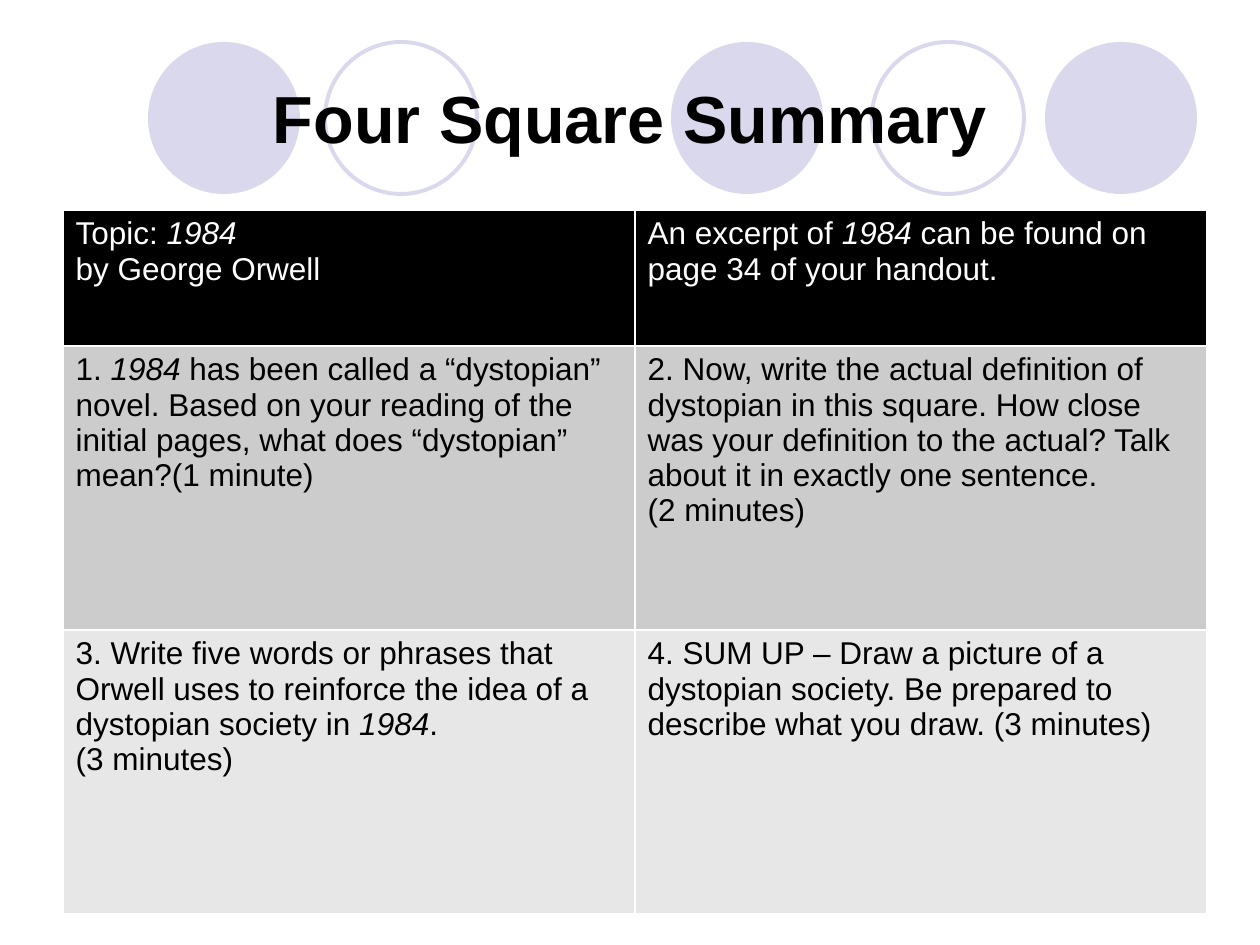
from lxml.etree import SubElement
from pptx import Presentation
from pptx.dml.color import RGBColor
from pptx.enum.shapes import MSO_SHAPE
from pptx.enum.text import MSO_ANCHOR, PP_ALIGN
from pptx.oxml.ns import qn
from pptx.util import Pt

SCALE = 914400 / 126


def px(length):
    return round(length * SCALE)


def color(value):
    return RGBColor.from_string(value)


deck = Presentation()
deck.slide_width, deck.slide_height = px(1260), px(945)
page = deck.slides.add_slide(deck.slide_layouts[6])

# Row of circles, filled or outlined
for left, filled in [(671, True), (1045, True), (148, True), (872, False), (325, False)]:
    circle = page.shapes.add_shape(MSO_SHAPE.OVAL, px(left), px(42), px(152), px(152))
    circle.shadow.inherit = False
    if filled:
        circle.fill.solid()
        circle.fill.fore_color.rgb = color("D9D8EC")
        circle.line.fill.background()
    else:
        circle.fill.background()
        circle.line.color.rgb = color("D9D8EC")
        circle.line.width = Pt(2.25)

# Title
title = page.shapes.add_textbox(px(63), px(38), px(1134), px(158)).text_frame
title.word_wrap = True
title.vertical_anchor = MSO_ANCHOR.MIDDLE
para = title.paragraphs[0]
para.text = "Four Square Summary"
para.alignment = PP_ALIGN.CENTER
para.font.name = "Arial"
para.font.size = Pt(38)
para.font.bold = True
para.font.color.rgb = color("000000")

# Table: height, fill, text colour and cells of each row; asterisks enclose italics
rows = [
    (136, "000000", "FFFFFF", [
        ["Topic: *1984*", "by George Orwell"],
        ["An excerpt of *1984 *can be found on page 34 of your handout."],
    ]),
    (284, "CCCCCC", "000000", [
        ["1. *1984* has been called a “dystopian” novel. Based on your reading of the "
         "initial pages, what does “dystopian” mean?(1 minute)"],
        ["2. Now, write the actual definition of dystopian in this square. How close was "
         "your definition to the actual? Talk about it in exactly one sentence.",
         "(2 minutes)"],
    ]),
    (284, "E7E7E7", "000000", [
        ["3. Write five words or phrases that Orwell uses to reinforce the idea of a "
         "dystopian society in *1984*.", "(3 minutes)"],
        ["4. SUM UP – Draw a picture of a dystopian society. Be prepared to describe "
         "what you draw. (3 minutes)"],
    ]),
]
table = page.shapes.add_table(3, 2, px(63), px(210), px(1144), px(704)).table
for column in table.columns:
    column.width = px(572)

for row_index, (height, fill, text_color, cells) in enumerate(rows):
    table.rows[row_index].height = px(height)
    for column_index, paragraphs in enumerate(cells):
        cell = table.cell(row_index, column_index)

        # White borders come before the fill in the cell properties
        properties = cell._tc.get_or_add_tcPr()
        for side in ("a:lnL", "a:lnR", "a:lnT", "a:lnB"):
            border = SubElement(properties, qn(side), w=str(Pt(1)))
            SubElement(SubElement(border, qn("a:solidFill")), qn("a:srgbClr"), val="FFFFFF")
        cell.fill.solid()
        cell.fill.fore_color.rgb = color(fill)

        frame = cell.text_frame
        for number, text in enumerate(paragraphs):
            para = frame.add_paragraph() if number else frame.paragraphs[0]
            para.font.name = "Arial"
            para.font.size = Pt(18)
            para.font.bold = False
            para.font.color.rgb = color(text_color)
            for part, words in enumerate(text.split("*")):
                if words:
                    span = para.add_run()
                    span.text = words
                    if part % 2:
                        span.font.italic = True

deck.save("out.pptx")
